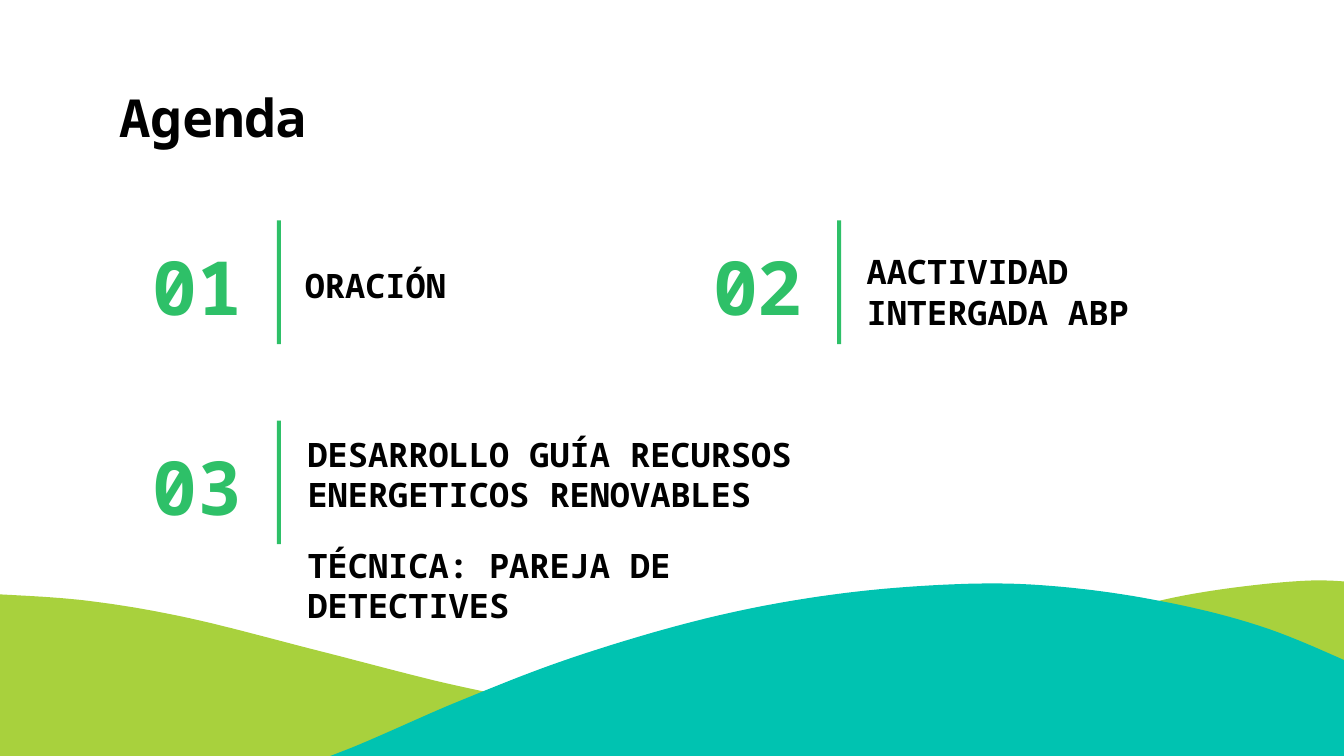
"""Build the Agenda slide with three numbered items above two hills."""
from pptx import Presentation
from pptx.dml.color import RGBColor
from pptx.enum.shapes import MSO_SHAPE
from pptx.enum.text import MSO_ANCHOR, PP_ALIGN
from pptx.util import Inches, Pt

RECT = MSO_SHAPE.RECTANGLE
TOP, MIDDLE, BOTTOM = MSO_ANCHOR.TOP, MSO_ANCHOR.MIDDLE, MSO_ANCHOR.BOTTOM
LEFT, RIGHT = PP_ALIGN.LEFT, PP_ALIGN.RIGHT
BLACK = RGBColor(0x00, 0x00, 0x00)
GREEN = RGBColor(0x2E, 0xC0, 0x68)
LIME = RGBColor(0xA8, 0xD1, 0x3D)
TEAL = RGBColor(0x00, 0xC3, 0xB1)
FONT = "Noto Sans Mono"
STEPS = 12

deck = Presentation()
deck.slide_width = Inches(10)
deck.slide_height = Inches(10 * 9 / 16)
slide = deck.slides.add_slide(deck.slide_layouts[6])
shapes = slide.shapes


def paint(shape, color):
    shape.fill.solid()
    shape.fill.fore_color.rgb = color
    shape.line.fill.background()
    shape.shadow.inherit = False


def add_text(place, lines, size, color, anchor=TOP, align=LEFT, after=0):
    box = shapes.add_textbox(*[Inches(n) for n in place])
    frame = box.text_frame
    frame.word_wrap = True
    frame.vertical_anchor = anchor
    frame.margin_left = frame.margin_right = Inches(0.1)
    frame.margin_top = frame.margin_bottom = Inches(0.1)
    for i, line in enumerate(lines):
        para = frame.add_paragraph() if i else frame.paragraphs[0]
        para.alignment = align
        para.space_after = Pt(after)
        run = para.add_run()
        run.text = line
        run.font.name = FONT
        run.font.size = Pt(size)
        run.font.bold = True
        run.font.color.rgb = color


hills = [
    (LIME, 6.19, [
        (-0.04, 4.42), (0.65, 4.47), (1.41, 4.6), (2.4, 4.85), (3.39, 5.1),
        (4.16, 5.24), (4.93, 5.29), (5.73, 5.23), (6.51, 5.07), (7.34, 4.84),
        (8.1, 4.61), (8.87, 4.42), (9.74, 4.32), (10.3, 4.36)]),
    (TEAL, 6.22, [
        (0.01, 5.99), (0.56, 6.04), (1.13, 6), (1.79, 5.85), (2.55, 5.59),
        (3.41, 5.22), (4.24, 4.9), (5.18, 4.62), (6.02, 4.45), (6.86, 4.36),
        (7.68, 4.35), (8.57, 4.46), (9.44, 4.68), (10.35, 5.07)]),
]
for color, base, crest in hills:
    knots = [crest[0]] + crest + [crest[-1]]
    curve = []
    for a, b, c, d in zip(knots, knots[1:], knots[2:], knots[3:]):
        for step in range(STEPS):
            t = step / STEPS
            curve.append([
                q + t / 2 * (r - p + t * (2 * p - 5 * q + 4 * r - s
                                          + t * (3 * q - p - 3 * r + s)))
                for p, q, r, s in zip(a, b, c, d)])
    first, last = crest[0], crest[-1]
    curve += [last, (last[0], base), (first[0], base)]
    points = [(Inches(x), Inches(y)) for x, y in curve]
    form = shapes.build_freeform(*points[0])
    form.add_line_segments(points[1:], close=True)
    paint(form.convert_to_shape(), color)

add_text((0.79, 0.59, 8.42, 0.55), ["Agenda"], 28, BLACK, MIDDLE)

items = [
    ("01", 0.89, 1.64, (2.17, 1.87, 2.76, 0.37), ["ORACIÓN"]),
    ("02", 5.06, 1.64, (6.35, 1.77, 2.76, 0.37),
     ["AACTIVIDAD INTERGADA ABP"]),
    ("03", 0.89, 3.13, (2.19, 3.13, 4.35, 2.2),
     ["DESARROLLO GUÍA RECURSOS ENERGETICOS RENOVABLES",
      "TÉCNICA: PAREJA DE DETECTIVES"]),
]
for number, left, top, place, lines in items:
    add_text((left, top, 1.01, 0.92), [number], 40, GREEN, BOTTOM, RIGHT)
    add_text(place, lines, 18, BLACK, after=16)
    bar = shapes.add_shape(RECT, Inches(left + 1.17), Inches(top),
                           Inches(0.03), Inches(0.92))
    paint(bar, GREEN)

deck.save("out.pptx")
